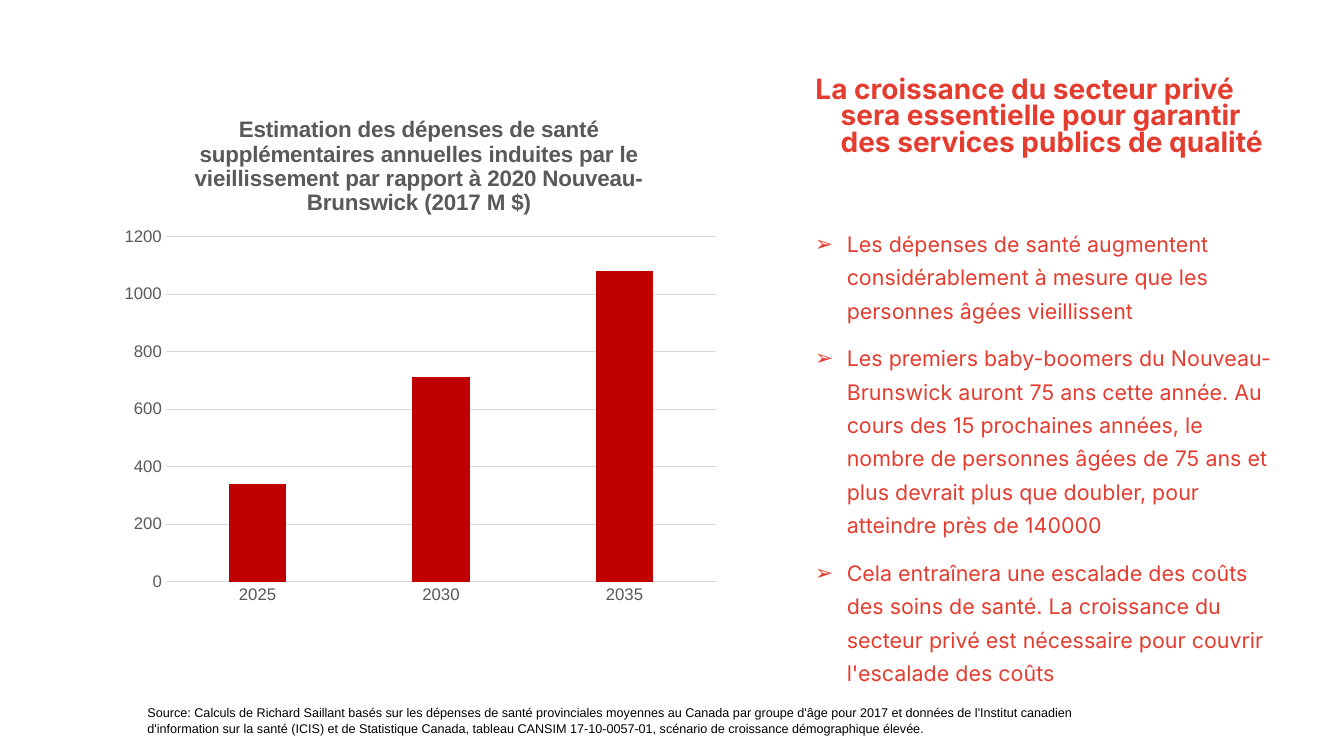
from dataclasses import dataclass

from lxml import etree
from pptx import Presentation
from pptx.chart.data import CategoryChartData
from pptx.dml.color import RGBColor
from pptx.enum.chart import XL_CHART_TYPE, XL_TICK_MARK
from pptx.enum.text import MSO_ANCHOR, MSO_AUTO_SIZE, PP_ALIGN
from pptx.oxml.ns import qn
from pptx.util import Emu, Pt

COLUMNS = XL_CHART_TYPE.COLUMN_CLUSTERED
NO_TICK = XL_TICK_MARK.NONE
TOP = MSO_ANCHOR.TOP
NO_FIT = MSO_AUTO_SIZE.NONE
LEFT = PP_ALIGN.LEFT

PX = 9525
RED = RGBColor(0xE4, 0x3D, 0x30)
BAR_RED = RGBColor(0xC0, 0x00, 0x00)
GREY = RGBColor(0x59, 0x59, 0x59)
GRID = RGBColor(0xD9, 0xD9, 0xD9)
BLACK = RGBColor(0x00, 0x00, 0x00)


@dataclass(frozen=True)
class Box:
    left: int
    top: int
    width: int
    height: int

    def emu(self) -> tuple[Emu, ...]:
        return tuple(Emu(v * PX) for v in (self.left, self.top, self.width, self.height))


HEADING_BOX = Box(743, 69, 489, 125)
BULLETS_BOX = Box(743, 208, 489, 458)
CHART_BOX = Box(105, 86, 589, 498)
SOURCE_BOX = Box(131, 667, 940, 38)

HEADING = "La croissance du secteur privé sera essentielle pour garantir des services publics de qualité"
BULLETS = [
    "Les dépenses de santé augmentent considérablement à mesure que les personnes âgées vieillissent",
    "Les premiers baby-boomers du Nouveau-Brunswick auront 75 ans cette année. Au cours des "
    "15 prochaines années, le nombre de personnes âgées de 75 ans et plus devrait plus que "
    "doubler, pour atteindre près de 140000",
    "Cela entraînera une escalade des coûts des soins de santé. La croissance du secteur privé "
    "est nécessaire pour couvrir l'escalade des coûts",
]
CHART_TITLE = (
    "Estimation des dépenses de santé supplémentaires annuelles induites par le "
    "vieillissement par rapport à 2020 Nouveau-Brunswick (2017 M $)"
)
SOURCE = (
    "Source: Calculs de Richard Saillant basés sur les dépenses de santé provinciales moyennes "
    "au Canada par groupe d'âge pour 2017 et données de l'Institut canadien d'information sur "
    "la santé (ICIS) et de Statistique Canada, tableau CANSIM 17-10-0057-01, scénario de "
    "croissance démographique élevée."
)
SPENDING = {"2025": 340, "2030": 710, "2035": 1080}


def set_font(font, size: float, color: RGBColor, name: str = "Arial", bold: bool = False) -> None:
    font.size, font.name, font.bold = Pt(size), name, bold
    font.color.rgb = color


def add_bullet(pPr, char: str, color: RGBColor) -> None:
    clr = etree.SubElement(pPr, qn("a:buClr"))
    etree.SubElement(clr, qn("a:srgbClr"), val=str(color))
    etree.SubElement(pPr, qn("a:buFont"), typeface="Arial")
    etree.SubElement(pPr, qn("a:buChar"), char=char)


def write(tf, paragraphs: list[str], *, size: float, color: RGBColor, name: str = "Arial",
          bold: bool = False, spacing: float = 1.0, before: float = 0,
          margin: int = 0, indent: int = 0, bullet: str = "") -> None:
    tf.word_wrap = True
    tf.auto_size = NO_FIT
    tf.vertical_anchor = TOP
    for i, text in enumerate(paragraphs):
        p = tf.add_paragraph() if i else tf.paragraphs[0]
        p.alignment = LEFT
        p.line_spacing = spacing
        p.space_before = Pt(before if i else 0)
        pPr = p._p.get_or_add_pPr()
        pPr.set("marL", str(margin * PX))
        pPr.set("indent", str(indent * PX))
        if bullet:
            add_bullet(pPr, bullet, color)
        r = p.add_run()
        r.text = text
        set_font(r.font, size, color, name, bold)


def add_text(s, box: Box, paragraphs: list[str], **fmt) -> None:
    write(s.shapes.add_textbox(*box.emu()).text_frame, paragraphs, **fmt)


def place(element, index: int, **fractions: float) -> None:
    for old in element.findall(qn("c:layout")):
        element.remove(old)
    layout = etree.Element(qn("c:layout"))
    manual = etree.SubElement(layout, qn("c:manualLayout"))
    if "w" in fractions:
        etree.SubElement(manual, qn("c:layoutTarget"), val="inner")
    for mode in ("xMode", "yMode"):
        etree.SubElement(manual, qn(f"c:{mode}"), val="edge")
    for key, value in fractions.items():
        etree.SubElement(manual, qn(f"c:{key}"), val=str(value))
    element.insert(index, layout)


def add_spending_chart(s, box: Box) -> None:
    data = CategoryChartData(number_format="0")
    data.categories = list(SPENDING)
    data.add_series("Series 1", list(SPENDING.values()))
    chart = s.shapes.add_chart(COLUMNS, *box.emu(), data).chart
    set_font(chart.font, 10, BLACK)
    chart.has_legend = False

    chart.has_title = True
    title = chart.chart_title
    r = title.text_frame.paragraphs[0].add_run()
    r.text = CHART_TITLE
    set_font(r.font, 16, GREY, bold=True)
    place(title._element, 1, x=0.13, y=0.04)
    place(chart._chartSpace.chart.plotArea, 0, x=0.09, y=0.28, w=0.89, h=0.66)

    plot = chart.plots[0]
    plot.gap_width, plot.overlap = 219, -27
    plot.vary_by_categories = False
    fill = plot.series[0].format.fill
    fill.solid()
    fill.fore_color.rgb = BAR_RED

    cat, val = chart.category_axis, chart.value_axis
    for axis in (cat, val):
        axis.major_tick_mark = axis.minor_tick_mark = NO_TICK
        set_font(axis.tick_labels.font, 12, GREY)
    val.minimum_scale, val.maximum_scale, val.major_unit = 0, 1200, 200
    val.has_major_gridlines = True
    val.format.line.fill.background()
    for line in (cat.format.line, val.major_gridlines.format.line):
        line.color.rgb = GRID
        line.width = Pt(0.75)


def main() -> None:
    prs = Presentation()
    prs.slide_width, prs.slide_height = Emu(1280 * PX), Emu(720 * PX)
    s = prs.slides.add_slide(prs.slide_layouts.get_by_name("Title Only"))
    title = s.shapes.title
    title.left, title.top, title.width, title.height = HEADING_BOX.emu()
    write(title.text_frame, [HEADING], size=20, color=RED, name="Inter", bold=True,
          spacing=0.8, margin=48, indent=-24)
    add_text(s, BULLETS_BOX, BULLETS, size=15.3, color=RED, name="Inter",
             spacing=1.3, before=10, margin=54, indent=-30, bullet="➢")
    add_spending_chart(s, CHART_BOX)
    add_text(s, SOURCE_BOX, [SOURCE], size=9, color=BLACK)
    prs.save("out.pptx")


if __name__ == "__main__":
    main()
